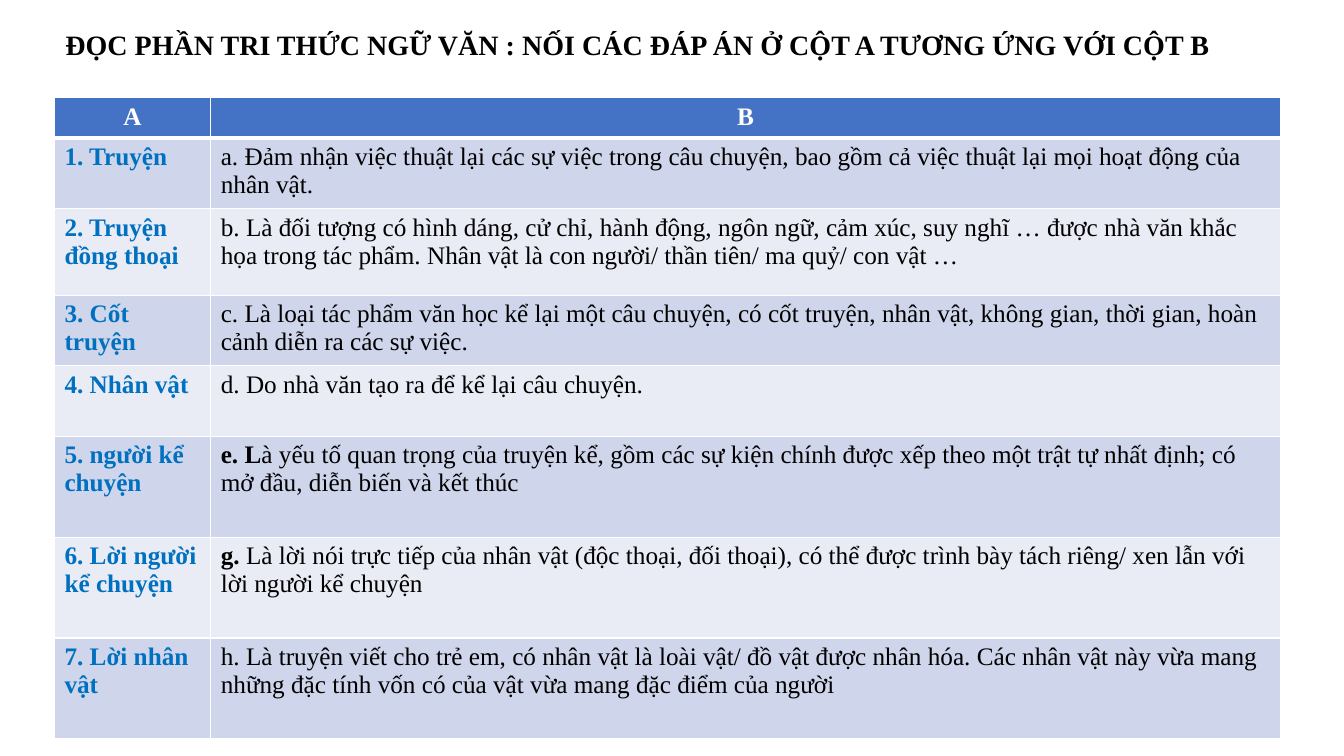
from lxml import etree
from pptx import Presentation
from pptx.dml.color import RGBColor
from pptx.enum.text import PP_ALIGN
from pptx.oxml.ns import qn
from pptx.util import Inches, Pt

CENTER, LEFT = PP_ALIGN.CENTER, PP_ALIGN.LEFT

# Content
TITLE = "ĐỌC PHẦN TRI THỨC NGỮ VĂN : NỐI CÁC ĐÁP ÁN Ở CỘT A TƯƠNG ỨNG VỚI CỘT B"
HEADER = ("A", "", "B")
# Term, bold lead of the answer, rest of the answer
PAIRS = [
    ("1. Truyện", "",
     "a. Đảm nhận việc thuật lại các sự việc trong câu chuyện, bao gồm cả việc "
     "thuật lại mọi hoạt động của nhân vật."),
    ("2. Truyện đồng thoại", "",
     "b. Là đối tượng có hình dáng, cử chỉ, hành động, ngôn ngữ, cảm xúc, suy nghĩ … "
     "được nhà văn khắc họa trong tác phẩm. Nhân vật là con người/ thần tiên/ ma quỷ/ "
     "con vật …"),
    ("3. Cốt truyện", "",
     "c. Là loại tác phẩm văn học kể lại một câu chuyện, có cốt truyện, nhân vật, "
     "không gian, thời gian, hoàn cảnh diễn ra các sự việc."),
    ("4. Nhân vật", "", "d. Do nhà văn tạo ra để kể lại câu chuyện."),
    ("5. người kể chuyện", "e. L",
     "à yếu tố quan trọng của truyện kể, gồm các sự kiện chính được xếp theo một "
     "trật tự nhất định; có mở đầu, diễn biến và kết thúc"),
    ("6. Lời người kể chuyện", "g. ",
     "Là lời nói trực tiếp của nhân vật (độc thoại, đối thoại), có thể được trình bày "
     "tách riêng/ xen lẫn với lời người kể chuyện"),
    ("7. Lời nhân vật", "",
     "h. Là truyện viết cho trẻ em, có nhân vật là loài vật/ đồ vật được nhân hóa. "
     "Các nhân vật này vừa mang những đặc tính vốn có của vật vừa mang đặc điểm của người"),
]

# Layout and colours
COL_WIDTHS = [1.55, 10.61]
ROW_HEIGHTS = [0.4, 0.7, 0.86, 0.7, 0.7, 1, 1, 1]
WHITE, BLACK, BLUE, TERM = "FFFFFF", "000000", "4472C4", "0070C0"
BANDS = ("CFD5EA", "E9EBF5")


def color(value):
    return RGBColor.from_string(value)


def add_run(p, text, size, ink, bold):
    r = p.add_run()
    r.text = text
    style = {"name": "Times New Roman", "size": Pt(size), "bold": bold}
    for key, value in style.items():
        setattr(r.font, key, value)
    r.font.color.rgb = color(ink)


def add_borders(cell, bottom):
    tc_pr = cell._tc.get_or_add_tcPr()
    widths = {"a:lnL": 1, "a:lnR": 1, "a:lnT": 1, "a:lnB": bottom}
    for i, (tag, width) in enumerate(widths.items()):
        ln = etree.Element(qn(tag), w=str(Pt(width)))
        fill = etree.SubElement(ln, qn("a:solidFill"))
        etree.SubElement(fill, qn("a:srgbClr"), val=WHITE)
        tc_pr.insert(i, ln)


def fill_cell(cell, runs, fill, align, bottom):
    cell.fill.solid()
    cell.fill.fore_color.rgb = color(fill)
    add_borders(cell, bottom)
    p = cell.text_frame.paragraphs[0]
    p.alignment = align
    for text, ink, bold in runs:
        if text:
            add_run(p, text, 18, ink, bold)


prs = Presentation()
prs.slide_width, prs.slide_height = Inches(13.33), Inches(7.5)
s = prs.slides.add_slide(prs.slide_layouts[6])

# Matching table
table = s.shapes.add_table(
    len(ROW_HEIGHTS), len(COL_WIDTHS), Inches(0.54), Inches(0.97),
    Inches(sum(COL_WIDTHS)), Inches(sum(ROW_HEIGHTS))).table
for column, width in zip(table.columns, COL_WIDTHS):
    column.width = Inches(width)
for i, (term, lead, answer) in enumerate([HEADER] + PAIRS):
    table.rows[i].height = Inches(ROW_HEIGHTS[i])
    head = i == 0
    fill = BLUE if head else BANDS[(i - 1) % 2]
    align = CENTER if head else LEFT
    bottom = 3 if head else 1
    ink = WHITE if head else BLACK
    term_runs = [(term, WHITE if head else TERM, True)]
    answer_runs = [(lead, ink, True), (answer, ink, head)]
    for j, runs in enumerate((term_runs, answer_runs)):
        fill_cell(table.cell(i, j), runs, fill, align, bottom)

# Title
tf = s.shapes.add_textbox(Inches(0.55), Inches(0.22), Inches(11.7), Inches(0.44)).text_frame
tf.word_wrap = True
add_run(tf.paragraphs[0], TITLE, 20, BLACK, True)

prs.save("out.pptx")
